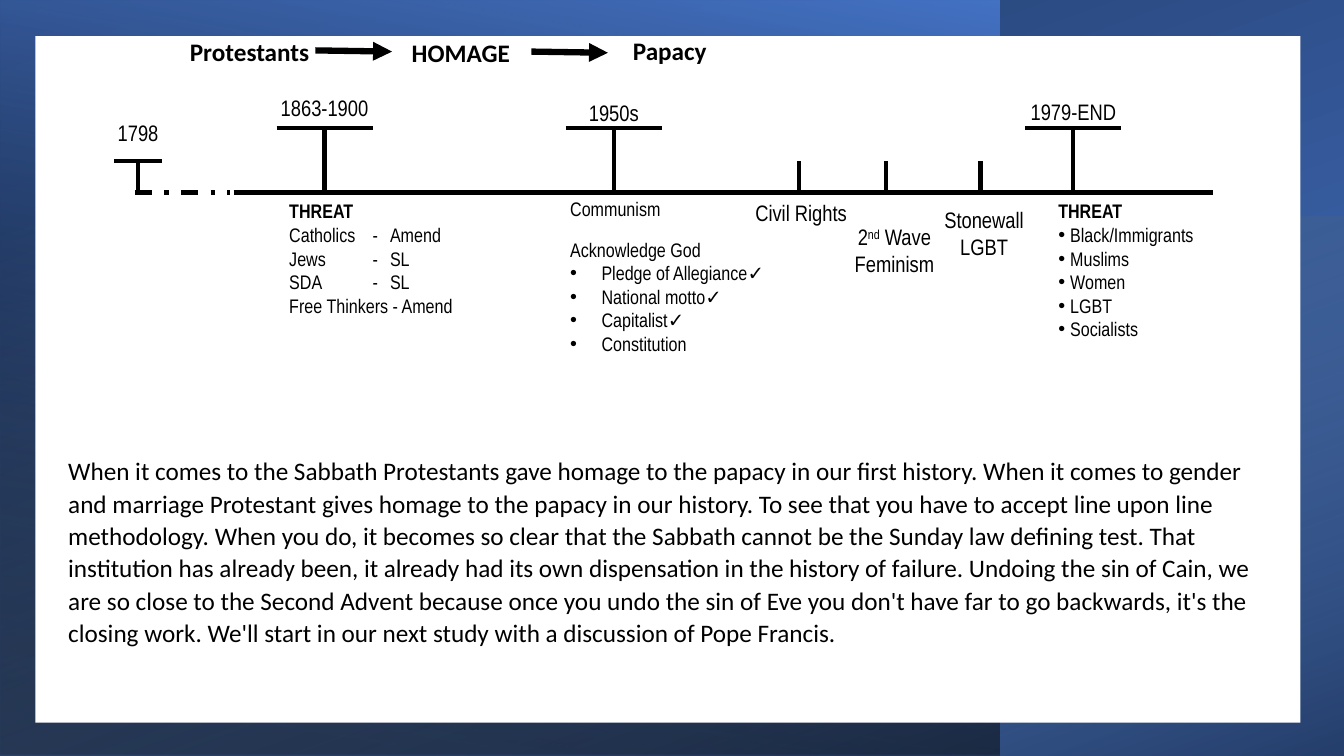
from dataclasses import dataclass

from lxml.etree import SubElement
from pptx import Presentation
from pptx.dml.color import RGBColor
from pptx.enum.dml import MSO_LINE
from pptx.enum.shapes import MSO_CONNECTOR, MSO_SHAPE
from pptx.enum.text import PP_ALIGN
from pptx.oxml.ns import qn
from pptx.util import Cm, Pt


@dataclass(frozen=True)
class Theme:
    """Colours, fonts, type sizes and line weights of the slide."""
    ink: str = "000000"
    paper: str = "FFFFFF"
    blue: str = "4472C4"
    navy: str = "203864"
    sky: str = "9DC3E6"
    body_font: str = "Calibri"
    line_font: str = "Arial Narrow"
    body_size: int = 18
    label_size: int = 16
    list_size: int = 14
    rule: float = 3
    arrow: float = 4.5


@dataclass(frozen=True)
class Box:
    """A region in centimetres."""
    left: float
    top: float
    width: float
    height: float

    def inner(self, dx, dy, width, height):
        """Return a box offset from this one."""
        return Box(self.left + dx, self.top + dy, width, height)

    def lengths(self):
        """Return left, top, width and height as lengths."""
        return Cm(self.left), Cm(self.top), Cm(self.width), Cm(self.height)


THEME = Theme()
HOMAGE_CHAIN = [("Protestants", 0, 0.02, 3.48), ("HOMAGE", 5.21, 0.05, 3.71),
                ("Papacy", 10.59, 0, 3.48)]
HOMAGE_ARROWS = [(3.4, 0.48), (8.84, 0.51)]
ARROW_LENGTH = 1.93
AXIS = 2.61
SHORT_STEM, TALL_STEM = 0.79, 1.63
ERAS = [("1798", 0.94, SHORT_STEM, 1.2, 0.63), ("1863-1900", 5.64, TALL_STEM, 2.42, 0),
        ("1950s", 12.93, TALL_STEM, 2.42, 0.13), ("1979-END", 24.51, TALL_STEM, 2.42, 0.1)]
MOVEMENTS = [(["Civil Rights"], 17.6, 17.65, 2.66), (["2nd Wave Feminism"], 19.79, 20, 3.27),
             (["Stonewall", "LGBT"], 22.17, 22.26, 2.84)]
FIRST_THREAT = ["THREAT", "Catholics\t-\tAmend", "Jews\t-\tSL", "SDA\t-\tSL",
                "Free Thinkers - Amend"]
COMMUNISM = ["Communism", "Acknowledge God", "Pledge of Allegiance✓", "National motto✓",
             "Capitalist✓", "Constitution"]
LAST_THREAT = ["THREAT", "Black/Immigrants", "Muslims", "Women", "LGBT", "Socialists"]
SUMMARY = (
    "When it comes to the Sabbath Protestants gave homage to the papacy in our first history. "
    "When it comes to gender and marriage Protestant gives homage to the papacy in our history. "
    "To see that you have to accept line upon line methodology. When you do, it becomes so clear "
    "that the Sabbath cannot be the Sunday law defining test. That institution has already been, "
    "it already had its own dispensation in the history of failure. Undoing the sin of Cain, we "
    "are so close to the Second Advent because once you undo the sin of Eve you don't have far to "
    "go backwards, it's the closing work. We'll start in our next study with a discussion of Pope "
    "Francis.")


def add_panel(slide, box):
    """Add a rectangle without outline or shadow."""
    panel = slide.shapes.add_shape(MSO_SHAPE.RECTANGLE, *box.lengths())
    panel.shadow.inherit = False
    panel.line.fill.background()
    return panel


def add_gradient(slide, box, rotation, angle, stops):
    """Add a mirrored, turned panel with a two-stop gradient of colour and opacity."""
    panel = add_panel(slide, box)
    panel.rotation = rotation
    panel._element.spPr.find(qn("a:xfrm")).set("flipH", "1")
    panel.fill.gradient()
    panel.fill.gradient_angle = 360 - angle
    for stop, (position, colour, _) in zip(panel.fill.gradient_stops, stops):
        stop.position = position / 100
        stop.color.rgb = RGBColor.from_string(colour)
    for shade, (_, _, opacity) in zip(panel._element.spPr.iter(qn("a:srgbClr")), stops):
        if opacity < 100:
            SubElement(shade, qn("a:alpha")).set("val", str(opacity * 1000))


def add_rule(slide, start, end, weight=THEME.rule):
    """Draw a straight black line between two points."""
    rule = slide.shapes.add_connector(MSO_CONNECTOR.STRAIGHT, *(Cm(n) for n in start + end))
    rule.line.color.rgb = RGBColor.from_string(THEME.ink)
    rule.line.width = Pt(weight)
    SubElement(rule._element.spPr, qn("a:effectLst"))
    return rule


def style(run, font, size, bold=False):
    """Format one run."""
    run.font.name, run.font.size, run.font.bold = font, Pt(size), bold
    run.font.color.rgb = RGBColor.from_string(THEME.ink)


def add_text(slide, box, lines, font, size, align=PP_ALIGN.LEFT, bold_lines=0):
    """Add wrapped lines, the first few in bold, and return their frame."""
    frame = slide.shapes.add_textbox(*box.lengths()).text_frame
    frame.word_wrap = True
    frame.text = "\n".join(lines)
    for index, paragraph in enumerate(frame.paragraphs):
        paragraph.alignment = align
        for run in paragraph.runs:
            style(run, font, size, index < bold_lines)
    return frame


def add_bullets(paragraphs, indent):
    """Give paragraphs a round bullet with a hanging indent."""
    for paragraph in paragraphs:
        properties = paragraph._p.get_or_add_pPr()
        properties.set("marL", str(Cm(indent)))
        properties.set("indent", str(-Cm(indent)))
        SubElement(properties, qn("a:buFont")).set("typeface", "Arial")
        SubElement(properties, qn("a:buChar")).set("char", "•")


def add_tabs(paragraphs, positions):
    """Set left tab stops."""
    for paragraph in paragraphs:
        tabs = SubElement(paragraph._p.get_or_add_pPr(), qn("a:tabLst"))
        for position in positions:
            tab = SubElement(tabs, qn("a:tab"))
            tab.set("pos", str(Cm(position)))
            tab.set("algn", "l")


def raise_ordinal(paragraph):
    """Split the leading ordinal and raise its ending."""
    text = paragraph.text
    paragraph.runs[0].text = text[:1]
    for piece in (text[1:3], text[3:]):
        run = paragraph.add_run()
        run.text = piece
        style(run, THEME.line_font, THEME.label_size)
    paragraph.runs[1].font._element.set("baseline", "30000")


def draw_backdrop(slide, box):
    """Layer the blue gradients and the white sheet."""
    side = (box.width - box.height) / 2
    add_gradient(slide, box.inner(side, -side, box.height, box.width), 270, 200,
                 [(8, THEME.blue, 100), (100, THEME.navy, 100)])
    add_gradient(slide, box.inner(0, 0, 25.2, box.height), 180, 80,
                 [(8, THEME.ink, 52), (100, THEME.blue, 100)])
    add_gradient(slide, box.inner(10.13, -4.67, 13.59, box.width), 270, 20,
                 [(0, THEME.sky, 0), (100, THEME.ink, 46)])
    sheet = add_panel(slide, box.inner(0.89, 0.91, 31.88, 17.3))
    sheet.fill.solid()
    sheet.fill.fore_color.rgb = RGBColor.from_string(THEME.paper)


def draw_homage(slide, box):
    """Draw the chain of words joined by arrows."""
    for word, dx, dy, width in HOMAGE_CHAIN:
        frame = add_text(slide, box.inner(dx, dy, width, box.height), [word],
                         THEME.body_font, THEME.body_size, PP_ALIGN.CENTER, 1)
        frame.margin_left = frame.margin_right = Cm(0.1)
        frame.margin_top = frame.margin_bottom = Cm(0.1)
    for dx, dy in HOMAGE_ARROWS:
        x, y = box.left + dx, box.top + dy
        arrow = add_rule(slide, (x, y), (x + ARROW_LENGTH, y + 0.03), THEME.arrow)
        SubElement(arrow.line._get_or_add_ln(), qn("a:tailEnd")).set("type", "triangle")


def draw_timeline(slide, box):
    """Draw the axis, its dated stems and the notes below it."""
    axis = box.top + AXIS
    add_rule(slide, (box.left + 3.35, axis), (box.left + 28.02, axis))
    lead = add_rule(slide, (box.left + 0.86, axis), (box.left + 3.25, axis))
    lead.line.dash_style = MSO_LINE.DASH_DOT
    for year, dx, stem, bar, dy in ERAS:
        x, top = box.left + dx, axis - stem
        add_rule(slide, (x, axis), (x, top))
        add_rule(slide, (x - bar / 2, top), (x + bar / 2, top))
        add_text(slide, box.inner(dx - 1.4, dy, 2.8, 0.94), [year],
                 THEME.line_font, THEME.label_size, PP_ALIGN.CENTER)
    for lines, dx, middle, dy in MOVEMENTS:
        add_rule(slide, (box.left + dx, axis), (box.left + dx, axis - SHORT_STEM))
        width = 2.84 if lines == ["Civil Rights"] else 2.51
        frame = add_text(slide, box.inner(middle - width / 2, dy, width, 1.63), lines,
                         THEME.line_font, THEME.label_size, PP_ALIGN.CENTER)
        if lines[0].startswith("2nd"):
            raise_ordinal(frame.paragraphs[0])
    fonts = THEME.line_font, THEME.list_size
    first = add_text(slide, box.inner(4.5, 2.66, 5.11, 3.25), FIRST_THREAT, *fonts, bold_lines=1)
    add_tabs(first.paragraphs[1:4], (2.1, 2.54))
    middle = add_text(slide, box.inner(11.58, AXIS, 5.41, 4.27), COMMUNISM, *fonts)
    middle.paragraphs[1].space_before = Pt(12)
    add_bullets(middle.paragraphs[2:], 0.79)
    last = add_text(slide, box.inner(23.88, 2.66, 5.11, 3.84), LAST_THREAT, *fonts, bold_lines=1)
    add_bullets(last.paragraphs[1:], 0.3)


def draw_summary(slide, box):
    """Write the closing paragraph."""
    frame = add_text(slide, box, [SUMMARY], THEME.body_font, THEME.body_size)
    frame.paragraphs[0].line_spacing = 1.07


def main():
    """Build and save the slide."""
    deck = Presentation()
    deck.slide_width, deck.slide_height = Cm(33.87), Cm(19.05)
    slide = deck.slides.add_slide(deck.slide_layouts[6])
    draw_backdrop(slide, Box(0, 0, 33.87, 19.05))
    draw_homage(slide, Box(4.55, 0.79, 14.07, 1.2))
    draw_summary(slide, Box(1.47, 11.3, 30.89, 5.16))
    draw_timeline(slide, Box(2.54, 2.24, 28.99, 6.88))
    deck.save("out.pptx")


if __name__ == "__main__":
    main()
